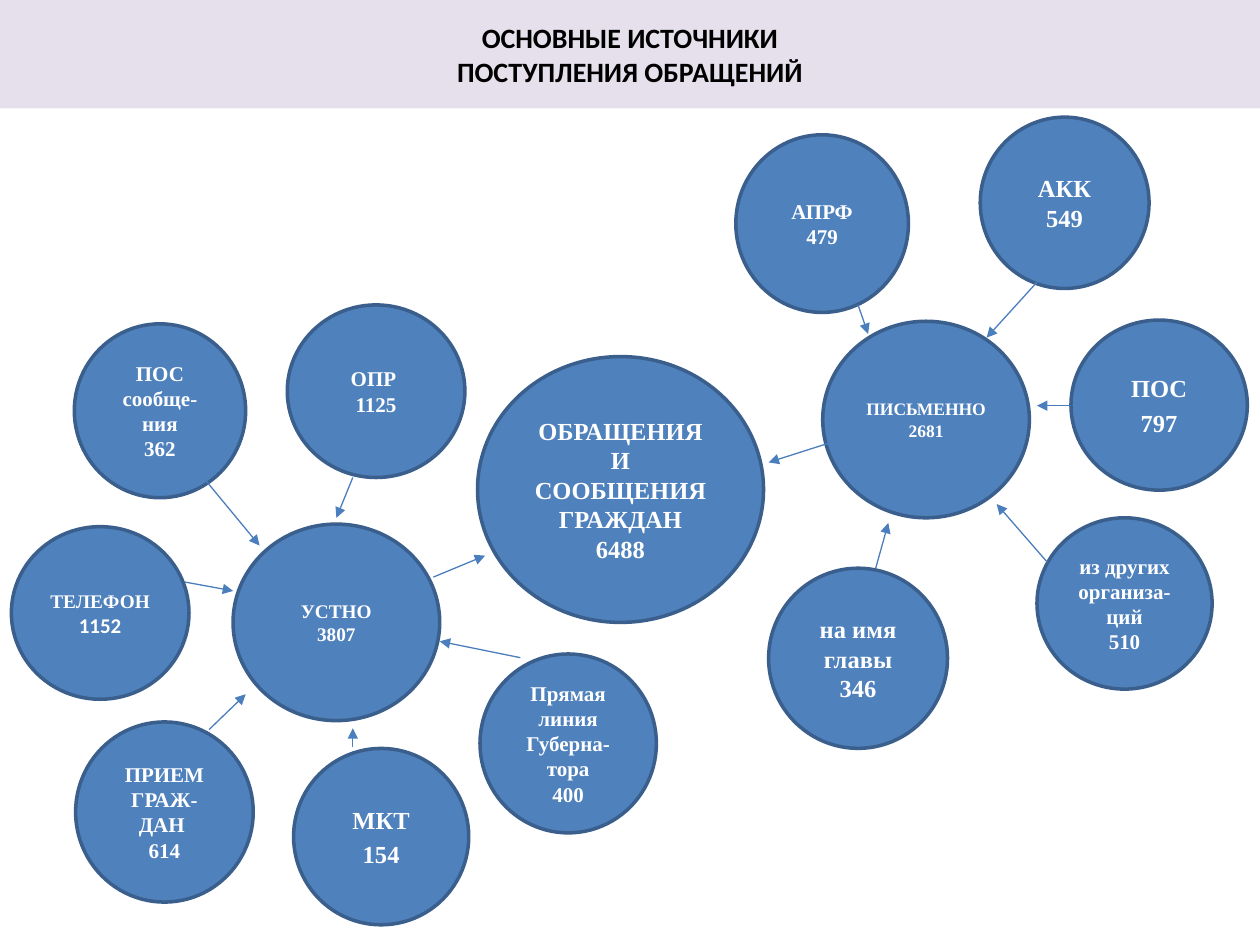
from lxml import etree
from pptx import Presentation
from pptx.dml.color import RGBColor
from pptx.enum.shapes import MSO_CONNECTOR, MSO_SHAPE
from pptx.enum.text import MSO_ANCHOR, MSO_AUTO_SIZE, PP_ALIGN
from pptx.oxml.ns import qn
from pptx.util import Inches, Pt

OVAL = MSO_SHAPE.OVAL
STRAIGHT = MSO_CONNECTOR.STRAIGHT
MIDDLE = MSO_ANCHOR.MIDDLE
CENTER = PP_ALIGN.CENTER
NO_FIT = MSO_AUTO_SIZE.NONE

COLORS = {
    "band": "E6E0EC",
    "title": "000000",
    "circle": "4F81BD",
    "outline": "3A5F8C",
    "label": "FFFFFF",
    "arrow": "4B7EBC",
}
SERIF, SANS = "Times New Roman", "Calibri"

TITLE_LINES = ["ОСНОВНЫЕ ИСТОЧНИКИ", "ПОСТУПЛЕНИЯ ОБРАЩЕНИЙ"]

SOURCES = [
    ((3.79, 2.83, 2.27, 2.11), 14, 0, ["ОБРАЩЕНИЯ", "И СООБЩЕНИЯ ГРАЖДАН", "6488"]),
    ((0.09, 4.18, 1.41, 1.37), 11, 0, [[("ТЕЛЕФОН", 11, SERIF), (" 1152", 12, SANS)]]),
    ((2.28, 2.42, 1.41, 1.37), 12, 0, ["ОПР ", "1125"]),
    ((0.6, 5.73, 1.41, 1.43), 12, 0, ["ПРИЕМ ГРАЖ-ДАН ", "614"]),
    ((6.53, 2.55, 1.64, 1.56), 10, 0, ["ПИСЬМЕННО", "2681"]),
    ((6.1, 4.51, 1.42, 1.43), 14, 0, ["на имя главы", "346"]),
    ((8.23, 4.11, 1.39, 1.36), 12, 0, ["из других организа-ций", "510"]),
    ((7.78, 0.93, 1.34, 1.36), 14, 0, ["АКК", "549"]),
    ((5.84, 1.07, 1.37, 1.41), 12, 0, ["АПРФ", "479"]),
    ((1.85, 4.16, 1.64, 1.56), 11, 0, ["УСТНО", "3807"]),
    ((2.33, 5.94, 1.39, 1.4), 14, 2.8, ["МКТ", "154"]),
    ((8.5, 2.54, 1.4, 1.35), 14, 2.8, ["ПОС", "797"]),
    ((3.81, 5.19, 1.4, 1.42), 12, 0, ["Прямая линия Губерна-тора", "400"]),
    ((0.59, 2.57, 1.36, 1.38), 12, 0, ["ПОС сообще-ния", "362"]),
]

FLOWS = [
    ((6.81, 2.42), (6.89, 2.65)),
    ((8.23, 2.24), (7.83, 2.68)),
    ((8.5, 3.22), (8.23, 3.22)),
    ((8.31, 4.46), (7.91, 4)),
    ((6.95, 4.51), (7.05, 4.15)),
    ((6.6, 3.51), (6.1, 3.67)),
    ((2.8, 3.79), (2.67, 4.11)),
    ((1.63, 3.81), (2.06, 4.33)),
    ((3.44, 4.58), (3.85, 4.41)),
    ((1.47, 4.62), (1.85, 4.69)),
    ((1.66, 5.79), (1.95, 5.51)),
    ((2.8, 5.93), (2.8, 5.78)),
    ((4.13, 5.22), (3.49, 5.09)),
]


def color(key):
    return RGBColor.from_string(COLORS[key])


def add_run(paragraph, text, size, font, color_key):
    run = paragraph.add_run()
    run.text = text
    run.font.size = Pt(size)
    run.font.name = font
    run.font.bold = True
    run.font.color.rgb = color(color_key)


def paint(shape, color_key):
    shape.fill.solid()
    shape.fill.fore_color.rgb = color(color_key)


def add_title(slide):
    title = slide.shapes.title
    title.left, title.top, title.width, title.height = map(Inches, (0, 0, 10, 0.86))
    paint(title, "band")
    frame = title.text_frame
    frame.vertical_anchor = MIDDLE
    frame.auto_size = NO_FIT
    heading = frame.paragraphs[0]
    heading.alignment = CENTER
    for index, line in enumerate(TITLE_LINES):
        if index:
            heading.add_line_break()
        add_run(heading, line, 16, SANS, "title")


def add_source(slide, box, size, space_before, paragraphs):
    circle = slide.shapes.add_shape(OVAL, *map(Inches, box))
    circle.shadow.inherit = False
    paint(circle, "circle")
    circle.line.color.rgb = color("outline")
    circle.line.width = Pt(2)
    frame = circle.text_frame
    frame.word_wrap = True
    frame.vertical_anchor = MIDDLE
    for index, content in enumerate(paragraphs):
        paragraph = frame.add_paragraph() if index else frame.paragraphs[0]
        paragraph.alignment = CENTER
        paragraph.space_before = Pt(space_before)
        runs = [(content, size, SERIF)] if isinstance(content, str) else content
        for text, run_size, font in runs:
            add_run(paragraph, text, run_size, font, "label")


def add_flow(slide, start, end):
    arrow = slide.shapes.add_connector(STRAIGHT, *map(Inches, start + end))
    arrow.line.color.rgb = color("arrow")
    arrow.line.width = Pt(0.75)
    etree.SubElement(arrow.line._get_or_add_ln(), qn("a:tailEnd"), type="triangle")
    etree.SubElement(arrow._element.spPr, qn("a:effectLst"))


def main():
    deck = Presentation()
    deck.slide_width, deck.slide_height = Inches(10), Inches(7.5)
    slide = deck.slides.add_slide(deck.slide_layouts[5])
    add_title(slide)
    for source in SOURCES:
        add_source(slide, *source)
    for flow in FLOWS:
        add_flow(slide, *flow)
    deck.save("out.pptx")


if __name__ == "__main__":
    main()
